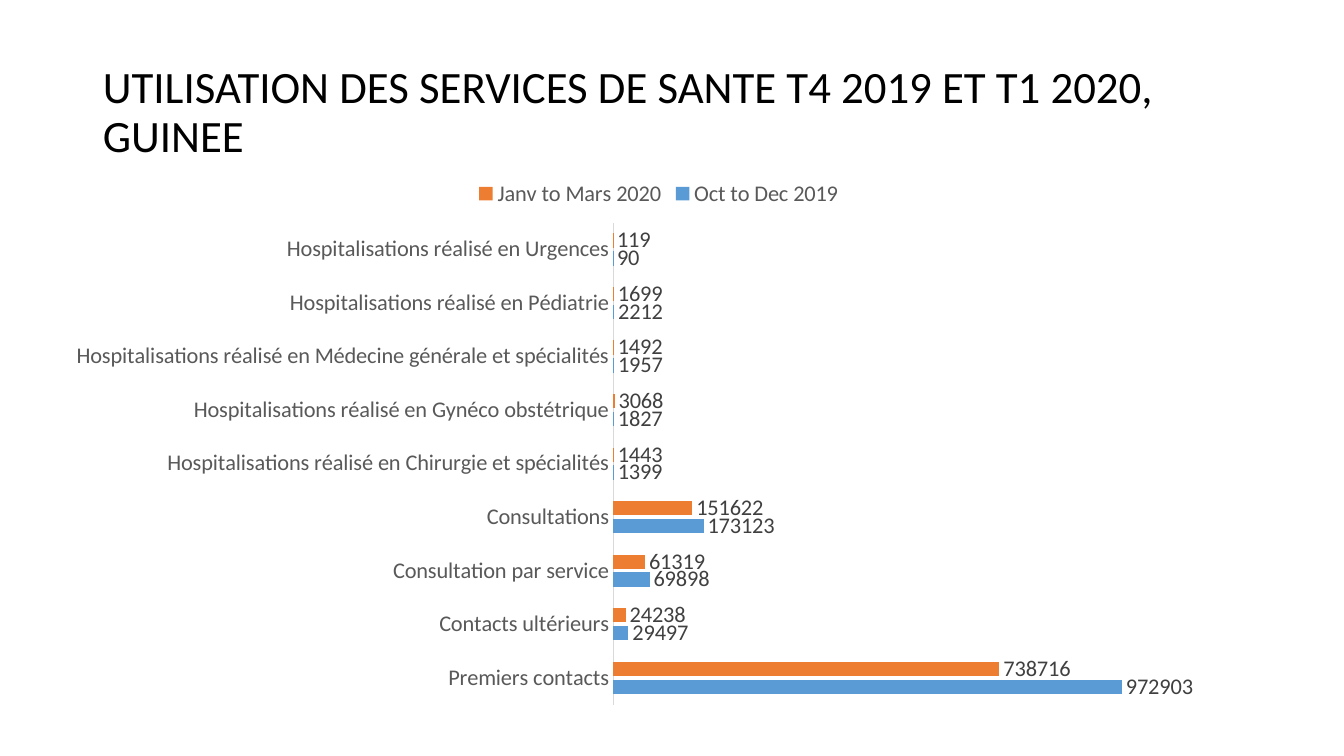
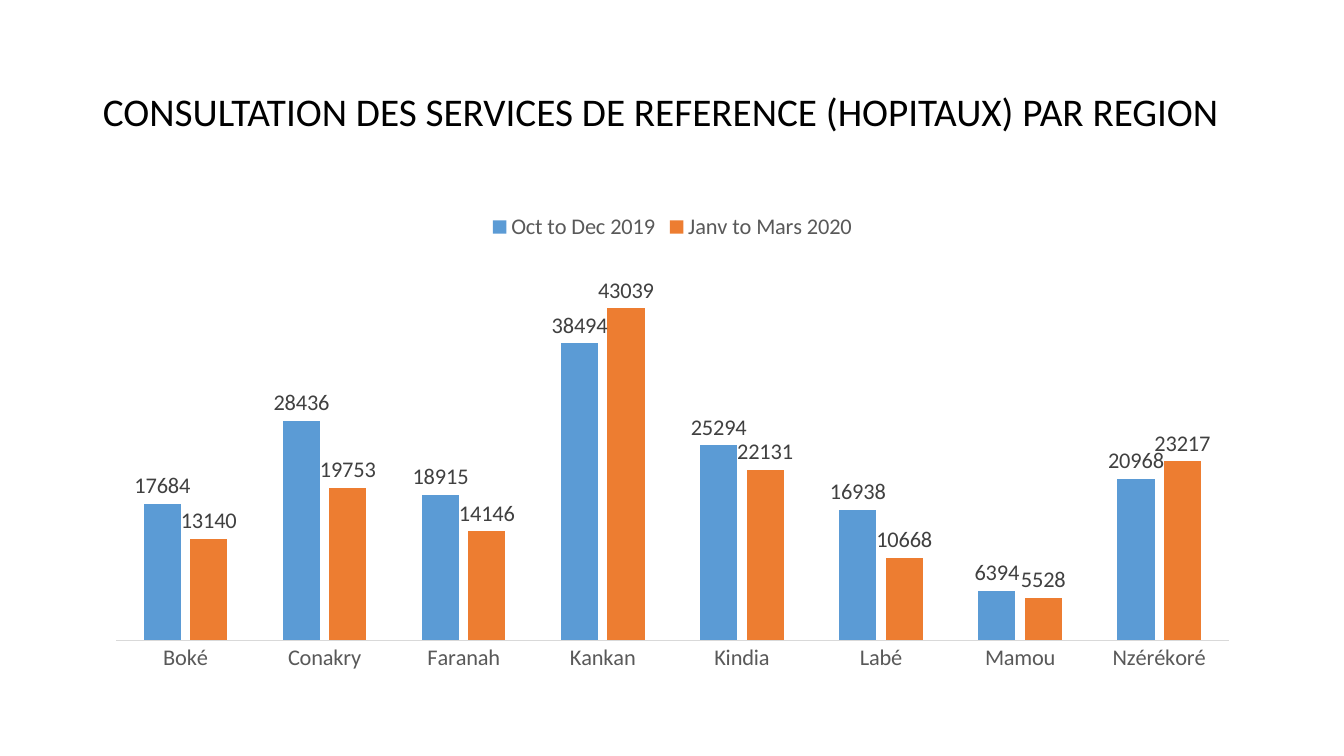
from pptx import Presentation
from pptx.chart.data import CategoryChartData
from pptx.dml.color import RGBColor
from pptx.enum.chart import (XL_CHART_TYPE, XL_LABEL_POSITION,
                             XL_LEGEND_POSITION, XL_TICK_MARK)
from pptx.enum.text import MSO_ANCHOR, MSO_AUTO_SIZE, PP_ALIGN
from pptx.util import Cm, Pt

BARS = XL_CHART_TYPE.BAR_CLUSTERED
COLUMNS = XL_CHART_TYPE.COLUMN_CLUSTERED
OUTSIDE = XL_LABEL_POSITION.OUTSIDE_END
LEGEND_TOP = XL_LEGEND_POSITION.TOP
NO_TICK = XL_TICK_MARK.NONE
MIDDLE = MSO_ANCHOR.MIDDLE
NO_AUTOFIT = MSO_AUTO_SIZE.NONE
LEFT = PP_ALIGN.LEFT

COLORS = {
    "title": "000000",
    "text": "595959",
    "label": "404040",
    "axis": "D9D9D9",
    "t4_2019": "5B9BD5",
    "t1_2020": "ED7D31",
}
FONT = "Calibri"
CHART_SIZE = 16
TITLE_BOX = (2.34, 1.02, 29.21, 3.68)
PERIODS = (("Oct to Dec 2019", "t4_2019"), ("Janv to Mars 2020", "t1_2020"))

SERVICES = [
    ("Premiers contacts", 972903, 738716),
    ("Contacts ultérieurs", 29497, 24238),
    ("Consultation par service", 69898, 61319),
    ("Consultations", 173123, 151622),
    ("Hospitalisations réalisé en Chirurgie et spécialités", 1399, 1443),
    ("Hospitalisations réalisé en Gynéco obstétrique", 1827, 3068),
    ("Hospitalisations réalisé en Médecine générale et spécialités", 1957, 1492),
    ("Hospitalisations réalisé en Pédiatrie", 2212, 1699),
    ("Hospitalisations réalisé en Urgences", 90, 119),
]
REGIONS = [
    ("Boké", 17684, 13140),
    ("Conakry", 28436, 19753),
    ("Faranah", 18915, 14146),
    ("Kankan", 38494, 43039),
    ("Kindia", 25294, 22131),
    ("Labé", 16938, 10668),
    ("Mamou", 6394, 5528),
    ("Nzérékoré", 20968, 23217),
]


def rgb(name):
    return RGBColor.from_string(COLORS[name])


def style_font(font, size, color):
    font.name = FONT
    font.size = Pt(size)
    font.bold = False
    font.color.rgb = rgb(color)


def set_title(s, text, size):
    sp = s.shapes.title
    sp.left, sp.top, sp.width, sp.height = map(Cm, TITLE_BOX)
    tf = sp.text_frame
    tf.text = text
    tf.word_wrap = True
    tf.auto_size = NO_AUTOFIT
    tf.vertical_anchor = MIDDLE
    p = tf.paragraphs[0]
    p.alignment = LEFT
    p.line_spacing = 0.9
    style_font(p.runs[0].font, size, "title")


def add_period_chart(s, kind, box, rows):
    """Compare the two periods; rows hold a category and one value per period."""
    categories, *values = zip(*rows)
    data = CategoryChartData()
    data.categories = categories
    for (name, _), series_values in zip(PERIODS, values):
        data.add_series(name, series_values)
    chart = s.shapes.add_chart(kind, *map(Cm, box), data).chart
    style_font(chart.font, CHART_SIZE, "title")
    chart.has_title = False

    chart.has_legend = True
    chart.legend.position = LEGEND_TOP
    chart.legend.include_in_layout = False
    style_font(chart.legend.font, CHART_SIZE, "text")

    axis = chart.category_axis
    axis.major_tick_mark = axis.minor_tick_mark = NO_TICK
    axis.format.line.color.rgb = rgb("axis")
    axis.format.line.width = Pt(0.75)
    style_font(axis.tick_labels.font, CHART_SIZE, "text")
    chart.value_axis.visible = False
    chart.value_axis.has_major_gridlines = False
    chart.value_axis.minimum_scale = 0

    plot = chart.plots[0]
    plot.vary_by_categories = False
    plot.gap_width = 150
    plot.overlap = -25
    for series, (_, color) in zip(plot.series, PERIODS):
        series.invert_if_negative = False
        series.format.fill.solid()
        series.format.fill.fore_color.rgb = rgb(color)
        labels = series.data_labels
        labels.show_value = True
        labels.position = OUTSIDE
        style_font(labels.font, CHART_SIZE, "label")


def add_chart_slide(prs, title, title_size, kind, box, rows):
    s = prs.slides.add_slide(prs.slide_layouts.get_by_name("Title Only"))
    set_title(s, title, title_size)
    add_period_chart(s, kind, box, rows)


def main():
    prs = Presentation()
    prs.slide_width, prs.slide_height = Cm(33.87), Cm(19.05)
    add_chart_slide(
        prs, "UTILISATION DES SERVICES DE SANTE T4 2019 ET T1 2020, GUINEE", 32,
        BARS, (1.32, 4.24, 30.56, 13.79), SERVICES)
    add_chart_slide(
        prs, "CONSULTATION DES SERVICES DE REFERENCE (HOPITAUX) PAR REGION", 28,
        COLUMNS, (2.34, 5.08, 29.21, 12.09), REGIONS)
    prs.save("out.pptx")


if __name__ == "__main__":
    main()
